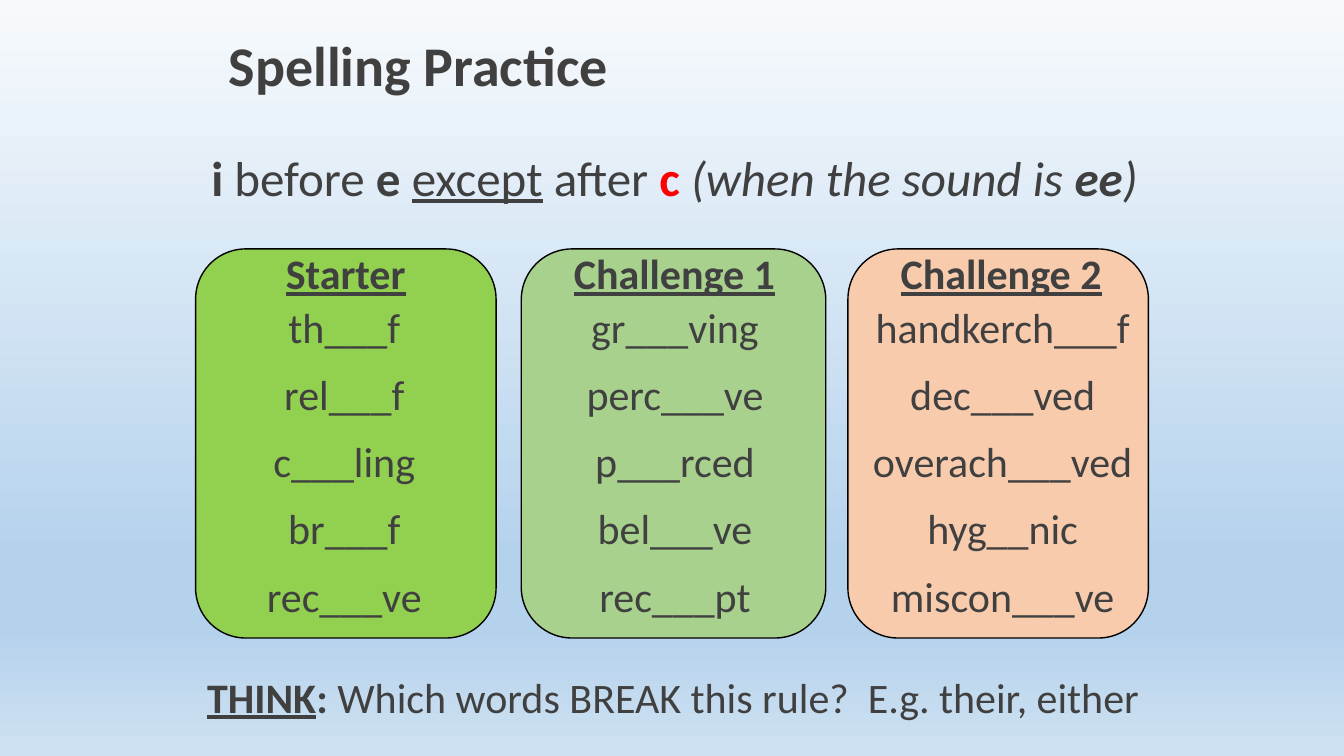
from lxml import etree
from pptx import Presentation
from pptx.dml.color import RGBColor
from pptx.enum.shapes import MSO_SHAPE
from pptx.enum.text import MSO_ANCHOR, MSO_AUTO_SIZE, PP_ALIGN
from pptx.oxml.ns import qn
from pptx.util import Inches, Pt

ROUNDED = MSO_SHAPE.ROUNDED_RECTANGLE
MIDDLE = MSO_ANCHOR.MIDDLE
NO_FIT = MSO_AUTO_SIZE.NONE
LEFT, CENTER = PP_ALIGN.LEFT, PP_ALIGN.CENTER

FONT = "Calibri"
INK = "404040"
RED = "FF0000"
BLACK = "000000"
TITLE_ONLY = 5
BODY_SIZE = 30

SKY_STOPS = [(0, "F7FAFD"), (74, "B5D2EC"), (83, "B5D2EC"), (100, "CEE1F2")]

CARDS = [
    {"heading": "Starter", "fill": "92D050", "left": 1.94, "width": 2.98,
     "heading_box": (2.73, 1.4), "words_box": (2.02, 2.79),
     "words": ["th___f", "rel___f", "c___ling", "br___f", "rec___ve"]},
    {"heading": "Challenge 1", "fill": "A9D18E", "left": 5.17, "width": 3.02,
     "heading_box": (5.58, 2.22), "words_box": (5.25, 2.89),
     "words": ["gr___ving", "perc___ve", "p___rced", "bel___ve", "rec___pt"]},
    {"heading": "Challenge 2", "fill": "F8CBAD", "left": 8.41, "width": 2.98,
     "heading_box": (8.82, 2.22), "words_box": (8.5, 2.89),
     "words": ["handkerch___f", "dec___ved", "overach___ved", "hyg__nic", "miscon___ve"]},
]

RULE = [
    ("i ", {"bold": True}),
    ("before ", {}),
    ("e ", {"bold": True}),
    ("except", {"underline": True}),
    (" after ", {}),
    ("c ", {"bold": True, "color": RED}),
    ("(when the sound is ", {"italic": True}),
    ("ee", {"bold": True, "italic": True}),
    (")", {"italic": True}),
]

THINK = [
    ("THINK", {"bold": True, "underline": True}),
    (": ", {"bold": True}),
    ("Which words BREAK this rule?  E.g. their, either", {}),
]


def rgb(color):
    return RGBColor.from_string(color)


def style_run(run, size, bold=False, italic=False, underline=False, color=INK):
    font = run.font
    font.name = FONT
    font.size = Pt(size)
    font.bold = bold
    font.italic = italic
    font.underline = underline
    font.color.rgb = rgb(color)


def paint_background(slide, stops):
    fill = slide.background.fill
    fill.gradient()
    fill.gradient_angle = 270
    stop_list = next(slide.element.iter(qn("a:gsLst")))
    for stop in list(stop_list):
        stop_list.remove(stop)
    for percent, color in stops:
        stop = etree.SubElement(stop_list, qn("a:gs"), pos=str(percent * 1000))
        etree.SubElement(stop, qn("a:srgbClr"), val=color)


def set_title(slide, text):
    title = slide.shapes.title
    title.left, title.top = Inches(2.17), Inches(0.05)
    title.width, title.height = Inches(9), Inches(1.25)
    text_frame = title.text_frame
    text_frame.text = text
    text_frame.auto_size = NO_FIT
    text_frame.vertical_anchor = MIDDLE
    paragraph = text_frame.paragraphs[0]
    paragraph.alignment = LEFT
    paragraph.line_spacing = 0.9
    style_run(paragraph.runs[0], 40, bold=True)


def add_panel(slide, left, width, color):
    shape = slide.shapes.add_shape(
        ROUNDED, Inches(left), Inches(2.47), Inches(width), Inches(3.86))
    shape.shadow.inherit = False
    shape.fill.solid()
    shape.fill.fore_color.rgb = rgb(color)
    shape.line.color.rgb = rgb(BLACK)
    shape.line.width = Pt(1)


def add_text(slide, left, top, width, height, lines, size=BODY_SIZE, gap=0, wrap=True):
    box = slide.shapes.add_textbox(
        Inches(left), Inches(top), Inches(width), Inches(height))
    text_frame = box.text_frame
    text_frame.word_wrap = wrap
    for index, pieces in enumerate(lines):
        paragraph = text_frame.add_paragraph() if index else text_frame.paragraphs[0]
        paragraph.alignment = CENTER
        paragraph.space_before = Pt(gap if index else 0)
        for text, style in pieces:
            run = paragraph.add_run()
            run.text = text
            style_run(run, size, **style)


def add_card(slide, card):
    add_panel(slide, card["left"], card["width"], card["fill"])
    left, width = card["words_box"]
    words = [[(word, {})] for word in card["words"]]
    add_text(slide, left, 2.94, width, 3.3, words, gap=12)
    left, width = card["heading_box"]
    heading = [(card["heading"], {"bold": True, "underline": True})]
    add_text(slide, left, 2.41, width, 0.61, [heading], wrap=False)


def main():
    presentation = Presentation()
    presentation.slide_width = Inches(13.33)
    presentation.slide_height = Inches(7.5)
    slide = presentation.slides.add_slide(presentation.slide_layouts[TITLE_ONLY])
    paint_background(slide, SKY_STOPS)
    set_title(slide, "Spelling Practice")
    add_text(slide, 1.69, 1.41, 10, 0.92, [RULE], size=35)
    for card in CARDS:
        add_card(slide, card)
    add_text(slide, 1.67, 6.61, 10.02, 0.61, [THINK])
    presentation.save("out.pptx")


if __name__ == "__main__":
    main()
